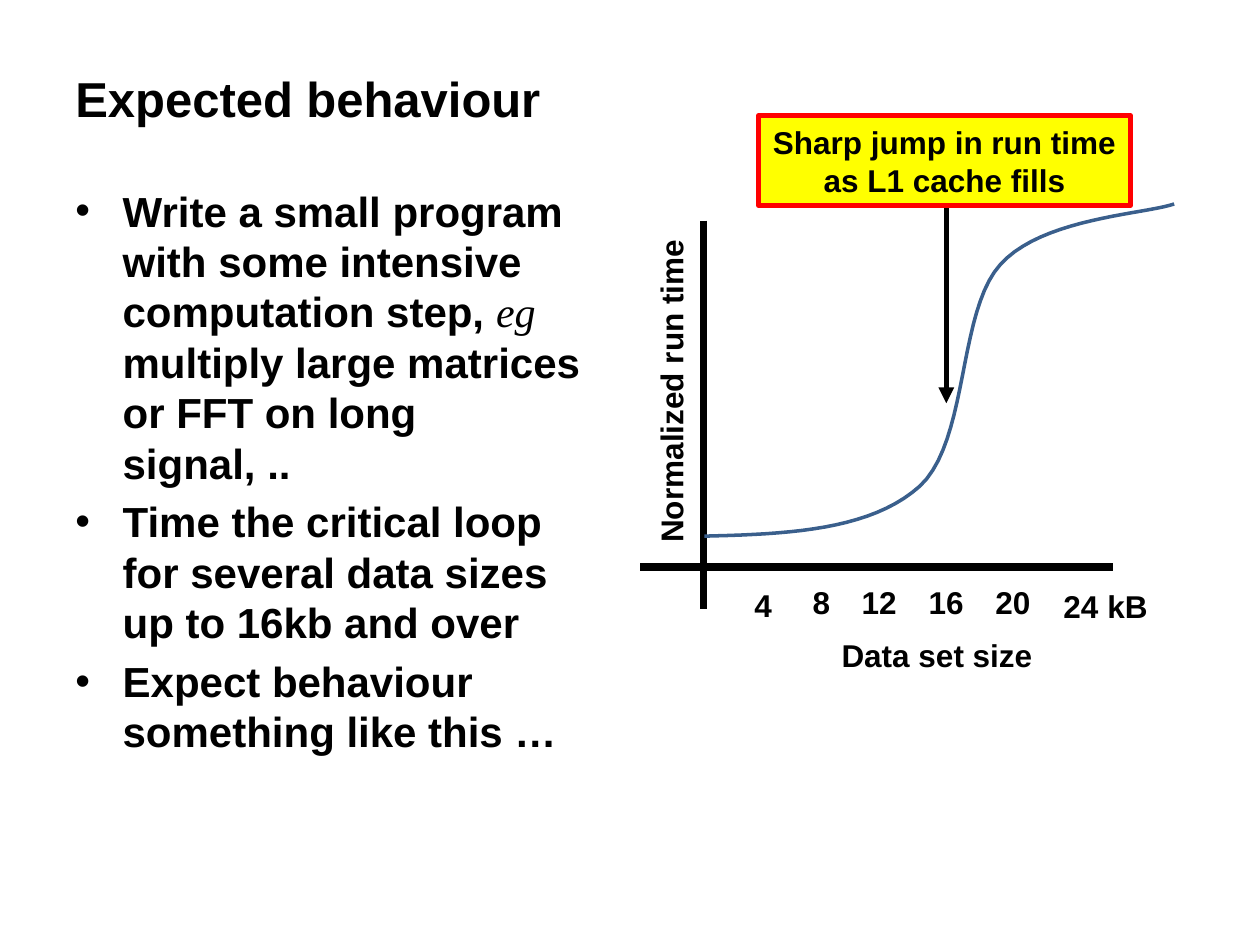
"""Build the slide on expected cache behaviour with its run-time sketch."""
from lxml import etree
from pptx import Presentation
from pptx.dml.color import RGBColor
from pptx.enum import shapes, text
from pptx.oxml import ns
from pptx.util import Pt


def style(font, size, name="Arial", color="000000"):
    font.size, font.name, font.bold = Pt(size), name, True
    font.color.rgb = RGBColor.from_string(color)


def add_text(left, top, width, height, content, size=18, wrap=False):
    box = slide.shapes.add_textbox(Pt(left), Pt(top), Pt(width), Pt(height))
    box.text_frame.word_wrap = wrap
    run = box.text_frame.paragraphs[0].add_run()
    run.text = content
    style(run.font, size)
    return box


presentation = Presentation()
presentation.slide_width, presentation.slide_height = Pt(720), Pt(540)
slide = presentation.slides.add_slide(presentation.slide_layouts[6])

title = add_text(36, 21.6, 648, 68.4, "Expected behaviour", 28, True)
title.text_frame.vertical_anchor = text.MSO_ANCHOR.MIDDLE

bullets = [
    [("Write a small program with some intensive computation step, ", False),
     ("eg", True),
     (" multiply large matrices or FFT on long signal, ..", False)],
    [("Time the critical loop for several data sizes up to 16kb and over", False)],
    [("Expect behaviour something like this …", False)],
]
body = slide.shapes.add_textbox(Pt(36), Pt(102.24), Pt(306), Pt(408)).text_frame
body.word_wrap = True
for index, runs in enumerate(bullets):
    paragraph = body.add_paragraph() if index else body.paragraphs[0]
    paragraph.space_before = Pt(4.8)
    properties = paragraph._p.get_or_add_pPr()
    properties.set("marL", str(Pt(27)))
    properties.set("indent", str(Pt(-27)))
    bullet_font = etree.SubElement(properties, ns.qn("a:buFont"))
    bullet_font.set("typeface", "Arial")
    etree.SubElement(properties, ns.qn("a:buChar")).set("char", "•")
    for content, italic in runs:
        run = paragraph.add_run()
        run.text = content
        style(run.font, 24, "Times New Roman" if italic else "Arial")
        run.font.italic = italic
        run.font.bold = not italic

lines = [
    (402, 126, 402, 348, 4.5, False),
    (636, 324, 366, 324, 4.5, False),
    (540.75, 117, 540.75, 230.4, 3, True),
]
for x1, y1, x2, y2, weight, arrow in lines:
    line = slide.shapes.add_connector(
        shapes.MSO_CONNECTOR.STRAIGHT, Pt(x1), Pt(y1), Pt(x2), Pt(y2))
    line.line.width = Pt(weight)
    line.line.color.rgb = RGBColor.from_string("000000")
    if arrow:
        tail = etree.SubElement(line.line._get_or_add_ln(), ns.qn("a:tailEnd"))
        tail.set("type", "triangle")
    etree.SubElement(line._element.spPr, ns.qn("a:effectLst"))

labels = [
    (473.8, 360, 124.6, "Data set size"),
    (424, 331.2, 24.4, "4"),
    (457.2, 329.8, 24.4, "8"),
    (485.3, 329.8, 34.6, "12"),
    (523.5, 329.8, 34.6, "16"),
    (561.7, 329.8, 34.6, "20"),
    (600.5, 331.9, 34.6, "24"),
    (625.7, 331.9, 37.4, "kB"),
]
for left, top, width, content in labels:
    add_text(left, top, width, 28.8, content)
add_text(288.7, 208.1, 189.4, 28.8, "Normalized run time").rotation = 270

curves = [
    [(402.5, 306.4), (450, 305.3), (497.5, 303.1), (525.6, 277.9)],
    [(525.6, 277.9), (553.7, 252), (547.2, 177.8), (571.7, 151.2)],
    [(571.7, 151.2), (595.4, 124.6), (654.5, 122.4), (671, 116.6)],
]
steps = 20
points = []
for curve in curves:
    for step in range(1, steps + 1):
        t = step / steps
        weights = ((1 - t) ** 3, 3 * t * (1 - t) ** 2, 3 * t ** 2 * (1 - t), t ** 3)
        points.append(tuple(
            Pt(sum(w * p[axis] for w, p in zip(weights, curve))) for axis in (0, 1)))
start_x, start_y = curves[0][0]
builder = slide.shapes.build_freeform(Pt(start_x), Pt(start_y))
builder.add_line_segments(points, close=False)
run_time = builder.convert_to_shape()
run_time.shadow.inherit = False
run_time.fill.background()
run_time.line.width = Pt(2)
run_time.line.color.rgb = RGBColor.from_string("3A5F8C")

callout = slide.shapes.add_shape(
    shapes.MSO_SHAPE.RECTANGLE, Pt(433.5), Pt(66.2), Pt(212.4), Pt(51.1))
callout.shadow.inherit = False
callout.fill.solid()
callout.fill.fore_color.rgb = RGBColor.from_string("FFFF00")
callout.line.width = Pt(3)
callout.line.color.rgb = RGBColor.from_string("FF0000")
frame = callout.text_frame
frame.word_wrap = False
for index, content in enumerate(["Sharp jump in run time", "as L1 cache fills"]):
    paragraph = frame.add_paragraph() if index else frame.paragraphs[0]
    paragraph.alignment = text.PP_ALIGN.CENTER
    run = paragraph.add_run()
    run.text = content
    style(run.font, 18)

presentation.save("out.pptx")
